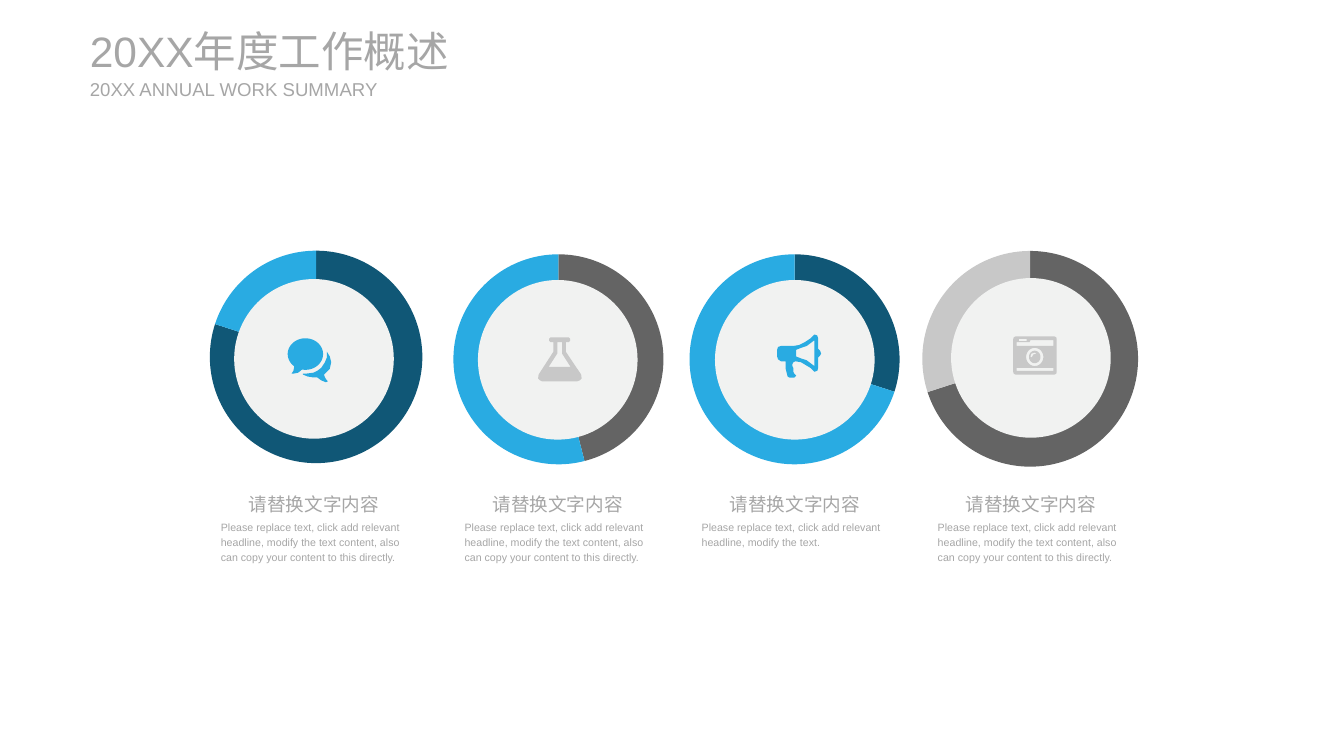
from dataclasses import dataclass
from math import cos, radians, sin

from lxml import etree
from pptx import Presentation
from pptx.chart.data import CategoryChartData
from pptx.dml.color import RGBColor
from pptx.enum.chart import XL_CHART_TYPE
from pptx.enum.shapes import MSO_SHAPE
from pptx.enum.text import MSO_ANCHOR, PP_ALIGN
from pptx.oxml import parse_xml
from pptx.oxml.ns import nsdecls
from pptx.util import Inches, Pt

PIE = XL_CHART_TYPE.PIE
OVAL = MSO_SHAPE.OVAL
TOP, MIDDLE = MSO_ANCHOR.TOP, MSO_ANCHOR.MIDDLE
LEFT, CENTER = PP_ALIGN.LEFT, PP_ALIGN.CENTER


@dataclass(frozen=True)
class Theme:
    """Colours, font and type sizes of the slide."""
    navy: str = "105776"
    blue: str = "29ABE2"
    dark: str = "646464"
    silver: str = "C8C8C8"
    disc: str = "F1F2F1"
    text: str = "A6A6A6"
    font: str = "Arial"
    title: int = 32
    heading: int = 14
    body: int = 8
    chart: int = 30


THEME = Theme()
DISC_SIZE = 1.67
DISC_INDENT = 0.14
COLUMN_WIDTH = 1.95
HEADING_TOP, BODY_TOP = 5.15, 5.42
PLOT_AREA = {"x": 0.075, "y": 0.001, "w": 0.852, "h": 1.0}
HEADING = "请替换文字内容"
SHORT_BODY = "Please replace text, click add relevant headline, modify the text."
LONG_BODY = ("Please replace text, click add relevant headline, modify the text content, "
             "also can copy your content to this directly.")


def arc(center_x, center_y, radius_x, radius_y, start=0, end=360, steps=60):
    """Return points along an elliptical arc."""
    angles = [radians(start + (end - start) * i / steps) for i in range(steps + 1)]
    return [(center_x + radius_x * cos(a), center_y + radius_y * sin(a)) for a in angles]


CHAT = [
    arc(18.5, 16.5, 18.5, 16.5, 129, 461) + [(11, 36), (6, 37), (4, 37), (6, 34)],
    [(41, 14), (44, 19), (45.5, 25), (44, 32), (38, 38), (39, 41), (41, 44), (42, 45),
     (40, 46), (35, 44), (31, 41), (27, 41), (21, 40), (16, 38), (16, 37), (19, 37),
     (27, 36), (31, 34), (35, 31), (39, 25), (41, 20), (41, 17)],
]
FLASK = [
    [(45, 39), (45.5, 43), (43.5, 45), (41, 46), (4, 46), (2, 45), (0, 43), (0.5, 39),
     (16, 15), (16, 5), (13, 5), (11.5, 3.5), (11.5, 1.5), (13, 0), (32, 0),
     (33.5, 1.5), (33.5, 3.5), (32, 5), (29, 5), (29, 15)],
    [(11, 31), (34, 31), (25, 17), (25, 5), (20, 5), (20, 17)],
]
MEGAPHONE = [
    [(46, 20), (45, 22), (43, 24), (43, 35), (42, 38), (39, 39), (35, 35), (30, 32),
     (25, 29), (19, 28), (17, 29), (16, 31), (16, 33), (17, 35), (17, 39), (18, 41),
     (20, 43), (18, 45), (13, 45), (11, 44), (10, 40), (9, 36), (9, 28), (4, 28),
     (1, 26), (0, 23), (0, 16), (1, 13), (4, 12), (17, 12), (23, 11), (29, 8),
     (35, 4), (39, 0), (42, 1), (43, 4), (43, 15), (45, 17)],
    [(39, 6), (35, 9), (31, 12), (25, 14), (20, 16), (20, 23), (25, 25), (31, 27),
     (35, 30), (39, 33)],
]
CAMERA = [
    [(2.5, 0), (43, 0), (45, 1), (45.5, 3), (45.5, 37), (45, 39), (43, 40), (2.5, 40),
     (0.5, 39), (0, 37), (0, 3), (0.5, 1)],
    [(42, 4), (18, 4), (17, 6), (3.5, 6), (3.5, 10), (42, 10)],
    [(42, 33), (3.5, 33), (3.5, 36), (42, 36)],
    [(6, 5), (14, 5), (14, 2.5), (6, 2.5)],
    arc(22.5, 21.5, 9, 9.5),
    arc(22.5, 21.5, 6, 6.5),
    [(20, 21), (21, 19), (23, 18.5), (24, 17.5), (22.5, 17), (19, 18), (18, 21), (19, 22)],
]


@dataclass(frozen=True)
class Topic:
    """One column: ring, disc, icon and wording."""
    left: float
    disc_top: float
    ring_at: tuple
    ring_size: float
    shares: tuple
    colors: tuple
    icon: list
    icon_at: tuple
    icon_color: str
    body: str = LONG_BODY


TOPICS = [
    Topic(2.31, 2.92, (2, 2.43), 2.61, (80, 20), (THEME.navy, THEME.blue),
          CHAT, (3.01, 3.54), THEME.blue),
    Topic(4.86, 2.93, (4.55, 2.47), 2.58, (46, 54), (THEME.dark, THEME.blue),
          FLASK, (5.63, 3.53), THEME.silver),
    Topic(7.34, 2.93, (7.02, 2.47), 2.58, (30, 70), (THEME.navy, THEME.blue),
          MEGAPHONE, (8.13, 3.5), THEME.blue, SHORT_BODY),
    Topic(9.81, 2.91, (9.45, 2.43), 2.65, (70, 30), (THEME.dark, THEME.silver),
          CAMERA, (10.6, 3.52), THEME.silver),
]


class SlideBuilder:
    """Draws styled elements on one slide."""

    def __init__(self, slide, theme):
        self.shapes = slide.shapes
        self.theme = theme

    def paint(self, shape, color):
        shape.shadow.inherit = False
        shape.fill.solid()
        shape.fill.fore_color.rgb = RGBColor.from_string(color)
        shape.line.fill.background()

    def text(self, wording, left, top, width, height, size, align=LEFT, anchor=MIDDLE):
        frame = self.shapes.add_textbox(
            Inches(left), Inches(top), Inches(width), Inches(height)).text_frame
        frame.word_wrap = True
        frame.vertical_anchor = anchor
        frame.margin_left = frame.margin_right = frame.margin_top = frame.margin_bottom = 0
        frame.text = wording
        paragraph = frame.paragraphs[0]
        paragraph.alignment = align
        font = paragraph.runs[0].font
        font.name, font.size = self.theme.font, Pt(size)
        font.color.rgb = RGBColor.from_string(self.theme.text)
        return paragraph

    def body(self, wording, left, top, width, height):
        paragraph = self.text(wording, left, top, width, height, self.theme.body, anchor=TOP)
        paragraph.line_spacing = 1.2
        paragraph.space_before = Pt(8)

    def ring(self, left, top, size, shares, colors):
        data = CategoryChartData()
        data.categories = ["1", "2"]
        data.add_series("Series 1", shares)
        chart = self.shapes.add_chart(
            PIE, Inches(left), Inches(top), Inches(size), Inches(size), data).chart
        chart.has_legend = chart.has_title = False
        chart.font.name, chart.font.size = self.theme.font, Pt(self.theme.chart)
        chart.font.color.rgb = RGBColor.from_string("000000")
        plot = chart.plots[0]
        plot.vary_by_categories = False
        for index, color in enumerate(colors):
            slice_format = plot.series[0].points[index].format
            slice_format.fill.solid()
            slice_format.fill.fore_color.rgb = RGBColor.from_string(color)
            slice_format.line.fill.background()
        self.place_plot(chart)

    def place_plot(self, chart):
        plot_area = chart._chartSpace.xpath("c:chart/c:plotArea")[0]
        for layout in plot_area.xpath("c:layout"):
            plot_area.remove(layout)
        layout = parse_xml(f"<c:layout {nsdecls('c')}><c:manualLayout/></c:layout>")
        settings = {"layoutTarget": "inner", "xMode": "edge", "yMode": "edge", **PLOT_AREA}
        namespace = etree.QName(layout).namespace
        for name, value in settings.items():
            etree.SubElement(layout[0], f"{{{namespace}}}{name}", val=str(value))
        plot_area.insert(0, layout)

    def disc(self, left, top):
        self.paint(self.shapes.add_shape(
            OVAL, Inches(left), Inches(top), Inches(DISC_SIZE), Inches(DISC_SIZE)),
            self.theme.disc)

    def icon(self, contours, left, top, color):
        outlines = [[(Inches(left + x / 100), Inches(top + y / 100)) for x, y in contour]
                    for contour in contours]
        builder = self.shapes.build_freeform(*outlines[0][0])
        for outline in outlines:
            builder.move_to(*outline[0])
            builder.add_line_segments(outline[1:], close=True)
        self.paint(builder.convert_to_shape(), color)

    def topic(self, topic):
        self.ring(*topic.ring_at, topic.ring_size, topic.shares, topic.colors)
        self.disc(topic.left + DISC_INDENT, topic.disc_top)
        self.text(HEADING, topic.left, HEADING_TOP, COLUMN_WIDTH, 0.24,
                  self.theme.heading, CENTER)
        self.body(topic.body, topic.left, BODY_TOP, COLUMN_WIDTH, 0.47)
        self.icon(topic.icon, *topic.icon_at, topic.icon_color)


def main():
    presentation = Presentation()
    presentation.slide_width, presentation.slide_height = Inches(14.06), Inches(7.91)
    slide = presentation.slides.add_slide(presentation.slide_layouts[6])
    builder = SlideBuilder(slide, THEME)
    for topic in TOPICS:
        builder.topic(topic)
    builder.text("20XX年度工作概述", 0.94, 0.26, 4.32, 0.54, THEME.title)
    builder.text("20XX ANNUAL WORK SUMMARY", 0.94, 0.81, 3.07, 0.24, THEME.heading)
    presentation.save("out.pptx")


if __name__ == "__main__":
    main()
